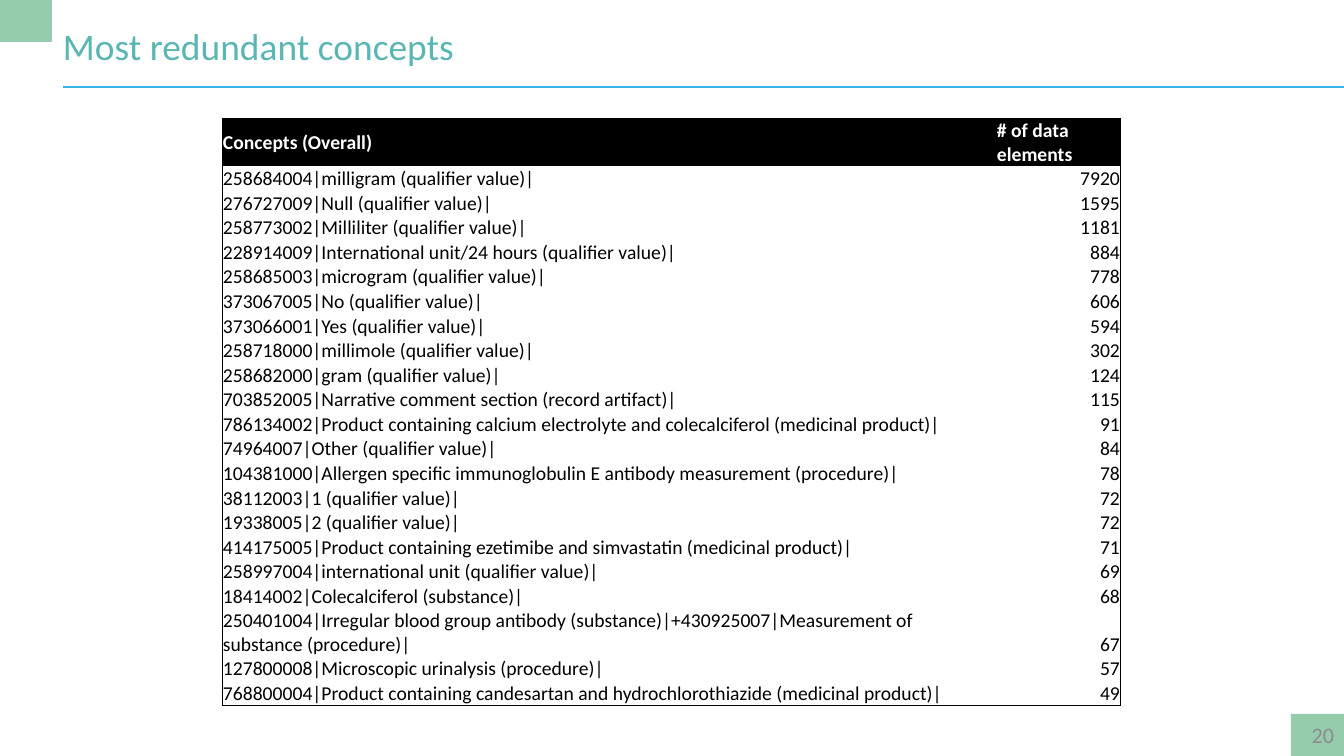
from dataclasses import dataclass

from pptx import Presentation
from pptx.dml.color import RGBColor
from pptx.enum.shapes import MSO_CONNECTOR as Connector, MSO_SHAPE as Shape
from pptx.enum.text import MSO_ANCHOR as Anchor, PP_ALIGN as Align
from pptx.oxml.ns import qn
from pptx.oxml.xmlchemy import OxmlElement as Element
from pptx.util import Emu, Pt

PX = 914400 / 100.8
PLAIN_TABLE = "{2D5ABB26-0587-4C30-8999-92F81FD0307C}"

HEADINGS = ("Concepts (Overall)", "# of data elements")
CONCEPTS = [
    ("258684004|milligram (qualifier value)|", 7920),
    ("276727009|Null (qualifier value)|", 1595),
    ("258773002|Milliliter (qualifier value)|", 1181),
    ("228914009|International unit/24 hours (qualifier value)|", 884),
    ("258685003|microgram (qualifier value)|", 778),
    ("373067005|No (qualifier value)|", 606),
    ("373066001|Yes (qualifier value)|", 594),
    ("258718000|millimole (qualifier value)|", 302),
    ("258682000|gram (qualifier value)|", 124),
    ("703852005|Narrative comment section (record artifact)|", 115),
    ("786134002|Product containing calcium electrolyte and colecalciferol (medicinal product)|", 91),
    ("74964007|Other (qualifier value)|", 84),
    ("104381000|Allergen specific immunoglobulin E antibody measurement (procedure)|", 78),
    ("38112003|1 (qualifier value)|", 72),
    ("19338005|2 (qualifier value)|", 72),
    ("414175005|Product containing ezetimibe and simvastatin (medicinal product)|", 71),
    ("258997004|international unit (qualifier value)|", 69),
    ("18414002|Colecalciferol (substance)|", 68),
    ("250401004|Irregular blood group antibody (substance)|+430925007|Measurement of substance (procedure)|", 67),
    ("127800008|Microscopic urinalysis (procedure)|", 57),
    ("768800004|Product containing candesartan and hydrochlorothiazide (medicinal product)|", 49),
]
TALL_ROWS = (0, 19)


@dataclass(frozen=True)
class Theme:
    font: str = "Calibri"
    title: str = "59B6B3"
    accent: str = "94CCAC"
    rule: str = "34B4E5"
    number: str = "8C8C8C"
    ink: str = "000000"
    paper: str = "FFFFFF"
    title_size: float = 26.7
    number_size: float = 15.8
    table_size: float = 14
    rule_width: float = 1.42
    border_width: float = 0.75


def px(length):
    return Emu(round(length * PX))


def assign(target, values):
    for name, value in values.items():
        setattr(target, name, value)


class SlideBuilder:
    """Draws styled elements on the current slide."""

    def __init__(self, page, theme):
        self.page = page
        self.theme = theme

    def block(self, *bounds):
        block = self.page.shapes.add_shape(Shape.RECTANGLE, *map(px, bounds))
        block.shadow.inherit = False
        block.fill.solid()
        block.fill.fore_color.rgb = RGBColor.from_string(self.theme.accent)
        block.line.fill.background()

    def rule(self, left, right, top):
        rule = self.page.shapes.add_connector(
            Connector.STRAIGHT, *map(px, (left, top, right, top)))
        rule.line.color.rgb = RGBColor.from_string(self.theme.rule)
        rule.line.width = Pt(self.theme.rule_width)
        rule._element.spPr.append(Element("a:effectLst"))

    def span(self, frame, text, size, color, align=Align.LEFT, bold=False):
        para = frame.paragraphs[0]
        para.alignment = align
        span = para.add_run()
        span.text = text
        assign(span.font, {"name": self.theme.font, "size": Pt(size), "bold": bold})
        span.font.color.rgb = RGBColor.from_string(color)

    def text(self, bounds, text, size, color, align=Align.LEFT,
             anchor=Anchor.TOP, inset=(0, 0)):
        box = self.page.shapes.add_textbox(*map(px, bounds))
        side, end = map(px, inset)
        assign(box.text_frame, {
            "word_wrap": True, "vertical_anchor": anchor,
            "margin_left": side, "margin_right": side,
            "margin_top": end, "margin_bottom": end})
        self.span(box.text_frame, text, size, color, align)

    def border(self, cell, side):
        line = Element(f"a:ln{side}")
        line.set("w", str(Pt(self.theme.border_width)))
        fill = Element("a:solidFill")
        color = Element("a:srgbClr")
        color.set("val", self.theme.ink)
        fill.append(color)
        line.append(fill)
        cell._tc.get_or_add_tcPr().append(line)

    def cell(self, cell, text, header, align, sides):
        theme = self.theme
        ink, fill = (theme.paper, theme.ink) if header else (theme.ink, theme.paper)
        assign(cell, {
            "margin_left": px(1), "margin_right": px(1),
            "margin_top": px(1), "margin_bottom": px(0),
            "vertical_anchor": Anchor.MIDDLE if header else Anchor.BOTTOM})
        for side in sides:
            self.border(cell, side)
        cell.fill.solid()
        cell.fill.fore_color.rgb = RGBColor.from_string(fill)
        self.span(cell.text_frame, text, theme.table_size, ink, align, header)

    def table(self, bounds, widths, row_height, tall_rows, rows):
        frame = self.page.shapes.add_table(len(rows), len(widths), *map(px, bounds))
        table = frame.table
        assign(table, {"first_row": False, "horz_banding": False})
        table._tbl.tblPr.find(qn("a:tableStyleId")).text = PLAIN_TABLE
        for column, width in zip(table.columns, widths):
            column.width = px(width)
        last_row, last_column = len(rows) - 1, len(widths) - 1
        for r, values in enumerate(rows):
            table.rows[r].height = px(row_height * (2 if r in tall_rows else 1))
            for c, value in enumerate(values):
                edges = {"L": c == 0, "R": c == last_column,
                         "T": r == 0, "B": r == last_row}
                sides = [side for side, shown in edges.items() if shown]
                align = Align.RIGHT if isinstance(value, int) else Align.LEFT
                self.cell(table.cell(r, c), str(value), r == 0, align, sides)
        frame.height = px(bounds[3])


def main():
    deck = Presentation()
    assign(deck, {"slide_width": px(1344), "slide_height": px(756)})
    theme = Theme()
    slide = SlideBuilder(deck.slides.add_slide(deck.slide_layouts[6]), theme)
    slide.block(1291, 714, 53, 42)
    slide.block(0, 0, 52, 42)
    slide.rule(63, 1344, 87)
    slide.text((63, 23, 1190, 45), "Most redundant concepts",
               theme.title_size, theme.title)
    slide.text((1205, 715, 139, 40), "20", theme.number_size, theme.number,
               Align.RIGHT, Anchor.MIDDLE, (10, 5))
    slide.table((222, 118, 899, 578), (774, 125), 18, TALL_ROWS,
                [HEADINGS, *CONCEPTS])
    deck.save("out.pptx")


if __name__ == "__main__":
    main()
